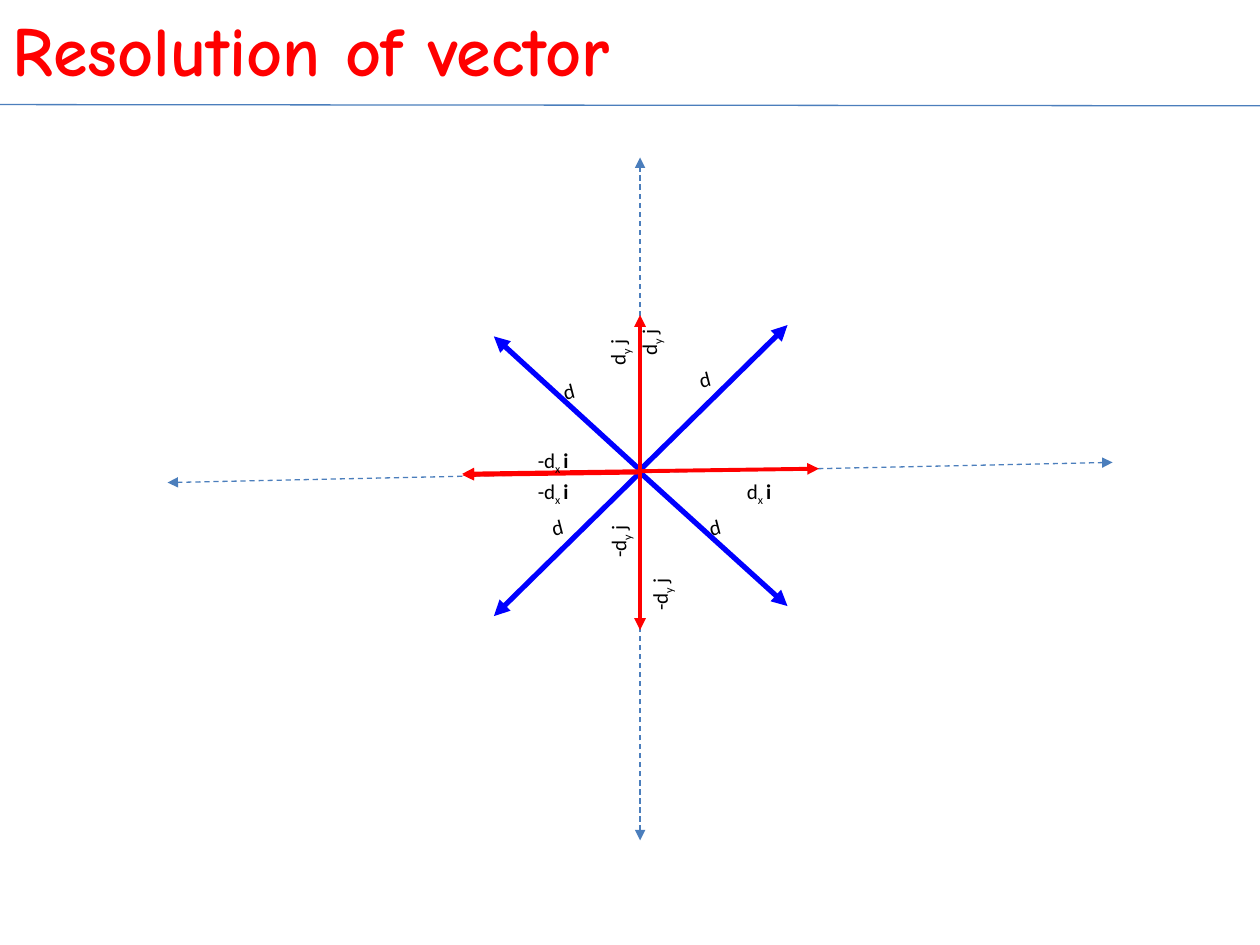
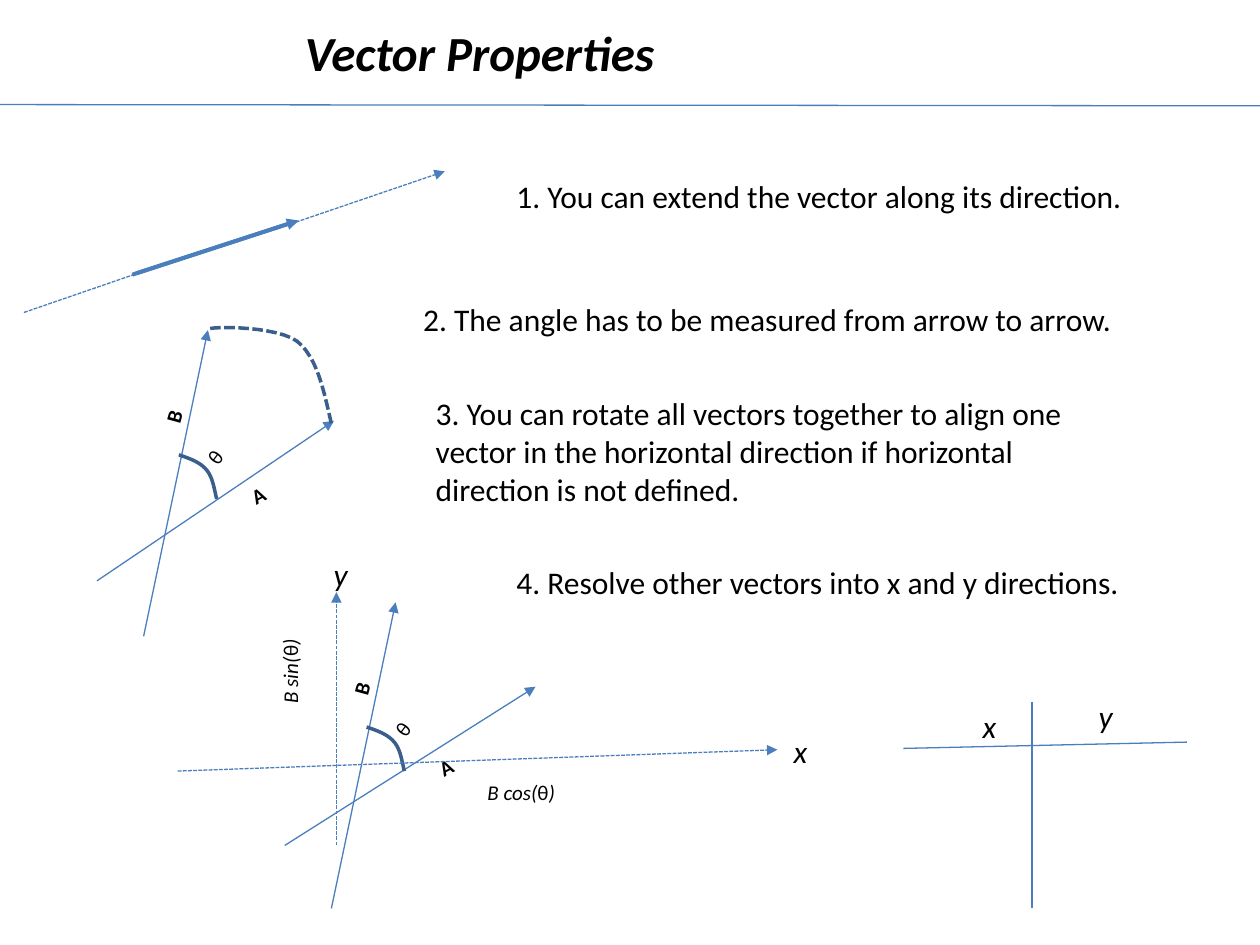
import pptx
import pptx.dml.color
import pptx.enum.dml
import pptx.enum.shapes
import pptx.enum.text
import pptx.oxml
import pptx.oxml.ns
import pptx.util

Inches = pptx.util.Inches
Dash = pptx.enum.dml.MSO_LINE

COLORS = {
    "line": "4B7EBC",
    "arc": "3A5F8C",
    "vector": "0000FF",
    "accent": "FF0000",
    "text": "000000",
}
BODY_FONT = "Calibri"
TITLE_FONT = "Comic Neue"

# Label content: (text, style) pieces; b = bold, i = italic, s = subscript
PLUS_X = [("d", ""), ("x ", "s"), ("i", "b")]
MINUS_X = [("-d", ""), ("x ", "s"), ("i", "b")]
PLUS_Y = [("d", ""), ("y", "s"), (" j", "")]
MINUS_Y = [("-d", ""), ("y", "s"), (" j", "")]


def rgb(name):
    return pptx.dml.color.RGBColor.from_string(COLORS[name])


def style_line(line, color, width, dash=None):
    line.color.rgb = rgb(color)
    line.width = pptx.util.Pt(width)
    if dash is not None:
        line.dash_style = dash


def add_line(page, start, end, color="line", width=0.75, dash=None, arrows=""):
    """Draw a line; arrows names its pointed ends: "tail" is at end, "head" at start."""
    points = [Inches(value) for value in (*start, *end)]
    line = page.shapes.add_connector(pptx.enum.shapes.MSO_CONNECTOR.STRAIGHT, *points)
    style_line(line.line, color, width, dash)
    properties = line._element.spPr
    outline = properties.find(pptx.oxml.ns.qn("a:ln"))
    namespace = pptx.oxml.ns.nsdecls("a")
    for side in arrows.split():
        outline.append(pptx.oxml.parse_xml(f'<a:{side}End {namespace} type="triangle"/>'))
    properties.append(pptx.oxml.parse_xml(f"<a:effectLst {namespace}/>"))


def style_run(span, size, style="", font=BODY_FONT, color="text"):
    span.font.name = font
    span.font.size = pptx.util.Pt(size)
    span.font.color.rgb = rgb(color)
    span.font.bold = "b" in style
    span.font.italic = "i" in style
    if "s" in style:
        span._r.get_or_add_rPr().set("baseline", "-25000")


def add_label(page, box, pieces, size=12, rotation=0, wrap=False):
    label = page.shapes.add_textbox(*map(Inches, box))
    label.rotation = rotation
    frame = label.text_frame
    frame.word_wrap = wrap
    frame.auto_size = pptx.enum.text.MSO_AUTO_SIZE.SHAPE_TO_FIT_TEXT
    for text, style in pieces:
        span = frame.paragraphs[0].add_run()
        span.text = text
        style_run(span, size, style)


def add_curve(page, start, curves, dash=None, steps=12):
    """Draw a smooth open outline through cubic (control, control, end) triples."""
    points = []
    corner = start
    for first, second, end in curves:
        for step in range(1, steps + 1):
            t = step / steps
            weights = ((1 - t) ** 3, 3 * t * (1 - t) ** 2, 3 * t * t * (1 - t), t ** 3)
            knots = (corner, first, second, end)
            points.append([Inches(sum(w * knot[axis] for w, knot in zip(weights, knots)))
                           for axis in (0, 1)])
        corner = end
    builder = page.shapes.build_freeform(Inches(start[0]), Inches(start[1]))
    builder.add_line_segments(points, close=False)
    curve = builder.convert_to_shape()
    curve.fill.background()
    curve.shadow.inherit = False
    style_line(curve.line, "arc", 2, dash)


def add_page(deck, title, box, **title_style):
    """Add a title-only page with the rule below its title."""
    page = deck.slides.add_slide(deck.slide_layouts[5])
    add_line(page, (0, 0.83), (10, 0.84))
    heading = page.shapes.title
    heading.left, heading.top, heading.width, heading.height = map(Inches, box)
    frame = heading.text_frame
    frame.text = title
    frame.auto_size = pptx.enum.text.MSO_AUTO_SIZE.NONE
    frame.vertical_anchor = pptx.enum.text.MSO_ANCHOR.TOP
    para = frame.paragraphs[0]
    para.alignment = pptx.enum.text.PP_ALIGN.LEFT
    style_run(para.runs[0], **title_style)
    return page


def add_resolution_diagram(page, left, top):
    """Draw vectors in four quadrants with their components, around the given origin."""
    def at(x, y):
        return left + x, top + y

    both = "head tail"
    add_line(page, at(-3.75, 0.08), at(3.75, -0.08), dash=Dash.DASH, arrows=both)
    add_line(page, at(0, 2.92), at(0, -2.5), dash=Dash.DASH, arrows=both)

    vectors = [  # start height, tip, label corner
        (-0.02, (1.17, -1.17), (0.37, -0.89)),
        (-0.02, (-1.16, -1.08), (-0.71, -0.8)),
        (0, (1.17, 1.06), (0.45, 0.28)),
        (0, (-1.16, 1.14), (-0.8, 0.28)),
    ]
    for start, tip, corner in vectors:
        add_line(page, at(0, start), at(*tip), "vector", 3, arrows="tail")
        add_label(page, (*at(*corner), 0.29, 0.3), [("d", "")], rotation=345.5)

    components = [  # start height, tip
        (0, (-1.41, 0.02)),
        (-0.01, (-1.41, 0.01)),
        (-0.01, (1.42, -0.03)),
        (0, (0, -1.25)),
        (0, (0, 1.25)),
    ]
    for start, tip in components:
        add_line(page, at(0, start), at(*tip), "accent", 2.25, arrows="tail")

    labels = [  # pieces, corner, width, rotation
        (PLUS_Y, (-0.39, -1.11), 0.42, 270),
        (PLUS_Y, (-0.14, -1.19), 0.42, 270),
        (MINUS_Y, (-0.41, 0.39), 0.47, 270),
        (MINUS_Y, (-0.08, 0.81), 0.47, 270),
        (PLUS_X, (0.75, 0), 0.42, 0),
        (MINUS_X, (-0.91, 0), 0.47, 0),
        (MINUS_X, (-0.91, -0.25), 0.47, 0),
    ]
    for pieces, corner, width, rotation in labels:
        add_label(page, (*at(*corner), width, 0.3), pieces, rotation=rotation)


def add_extended_vector(page, left, top):
    def at(x, y):
        return left + x, top + y

    add_line(page, at(0.89, 0.81), at(2.18, 0.39), width=2.25, arrows="tail")
    add_line(page, at(0.86, 0.82), at(2.15, 0.4), width=2.25)
    add_line(page, at(0, 1.12), at(1.22, 0.7), dash=Dash.SQUARE_DOT)
    add_line(page, at(2.08, 0.43), at(3.34, 0), dash=Dash.SQUARE_DOT, arrows="tail")


def add_angle_figure(page, left, top, a_start, a_end):
    """Draw vectors A and B with the angle between them; A's ends are relative."""
    def at(x, y):
        return left + x, top + y

    add_line(page, at(*a_start), at(*a_end), arrows="tail")
    add_line(page, at(0.37, 2.43), at(0.88, 0), arrows="tail")
    for text, style, corner, rotation in [
        ("A", "b", (1.13, 1.16), 332.1),
        ("B", "b", (0.46, 0.53), 285.3),
        ("θ", "", (0.79, 0.85), 306.4),
    ]:
        add_label(page, (*at(*corner), 0.3, 0.3), [(text, style)], rotation=rotation)
    add_curve(page, at(0.95, 1.34), [
        (at(0.93, 1.26), at(0.92, 1.17), at(0.87, 1.11)),
        (at(0.82, 1.05), at(0.74, 1.02), at(0.65, 0.99)),
    ])


def add_axis_names(page, x_corner, y_corner):
    for name, corner in (("x", x_corner), ("y", y_corner)):
        add_label(page, (*corner, 0.31, 0.4), [(name, "i")], size=18)


def add_resolved_axes(page, left, top):
    def at(x, y):
        return left + x, top + y

    add_line(page, at(0, 1.76), at(4.76, 1.59), dash=Dash.SQUARE_DOT, arrows="tail")
    add_line(page, at(1.26, 2.35), at(1.26, 0.34), dash=Dash.SQUARE_DOT, arrows="tail")
    add_axis_names(page, at(4.79, 1.4), at(1.14, 0))
    for name, corner, width, rotation in [
        ("sin", (0.53, 0.81), 0.72, 270),
        ("cos", (2.36, 1.78), 0.75, 0),
    ]:
        pieces = [(f"B {name}(", "i"), ("θ", ""), (")", "i")]
        add_label(page, (*at(*corner), width, 0.3), pieces, rotation=rotation)


def add_component_cross(page, left, top):
    def at(x, y):
        return left + x, top + y

    add_line(page, at(0, 0.46), at(2.25, 0.41))
    add_line(page, at(1.02, 0.09), at(1.02, 1.73))
    add_axis_names(page, at(0.53, 0.08), at(1.45, 0))


def add_rules(page):
    rules = [  # text, box, wrap
        ("1. You can extend the vector along its direction.", (4, 1.36, 5.07, 0.4), False),
        ("2. The angle has to be measured from arrow to arrow.",
         (3.26, 2.33, 5.73, 0.4), False),
        ("3. You can rotate all vectors together to align one vector in the horizontal "
         "direction if horizontal direction is not defined.", (3.36, 3.08, 5.26, 1.01), True),
        ("4. Resolve other vectors into x and y directions.", (4, 4.42, 5.26, 0.4), True),
    ]
    for text, box, wrap in rules:
        add_label(page, box, [(text, "")], size=18, wrap=wrap)


def build_resolution_page(deck):
    page = add_page(deck, "Resolution of vector", (0, 0, 6.58, 0.77),
                    size=40, style="b", font=TITLE_FONT, color="accent")
    add_resolution_diagram(page, 5.08, 3.75)


def build_properties_page(deck):
    page = add_page(deck, "Vector Properties", (2.32, 0.13, 3.1, 0.57), size=28, style="bi")
    add_extended_vector(page, 0.19, 1.36)
    add_angle_figure(page, 0.77, 2.62, (0, 1.99), (1.88, 0.72))
    add_curve(page, (2.63, 3.36), [
        ((2.57, 3.1), (2.52, 2.84), (2.36, 2.71)),
        ((2.2, 2.59), (1.71, 2.59), (1.66, 2.61)),
    ], dash=Dash.SQUARE_DOT)
    add_angle_figure(page, 2.26, 4.78, (0, 1.93), (1.99, 0.67))
    add_resolved_axes(page, 1.41, 4.36)
    add_component_cross(page, 7.17, 5.48)
    add_rules(page)


def main():
    deck = pptx.Presentation()
    deck.slide_width, deck.slide_height = Inches(10), Inches(7.5)
    build_resolution_page(deck)
    build_properties_page(deck)
    deck.save("out.pptx")


if __name__ == "__main__":
    main()
